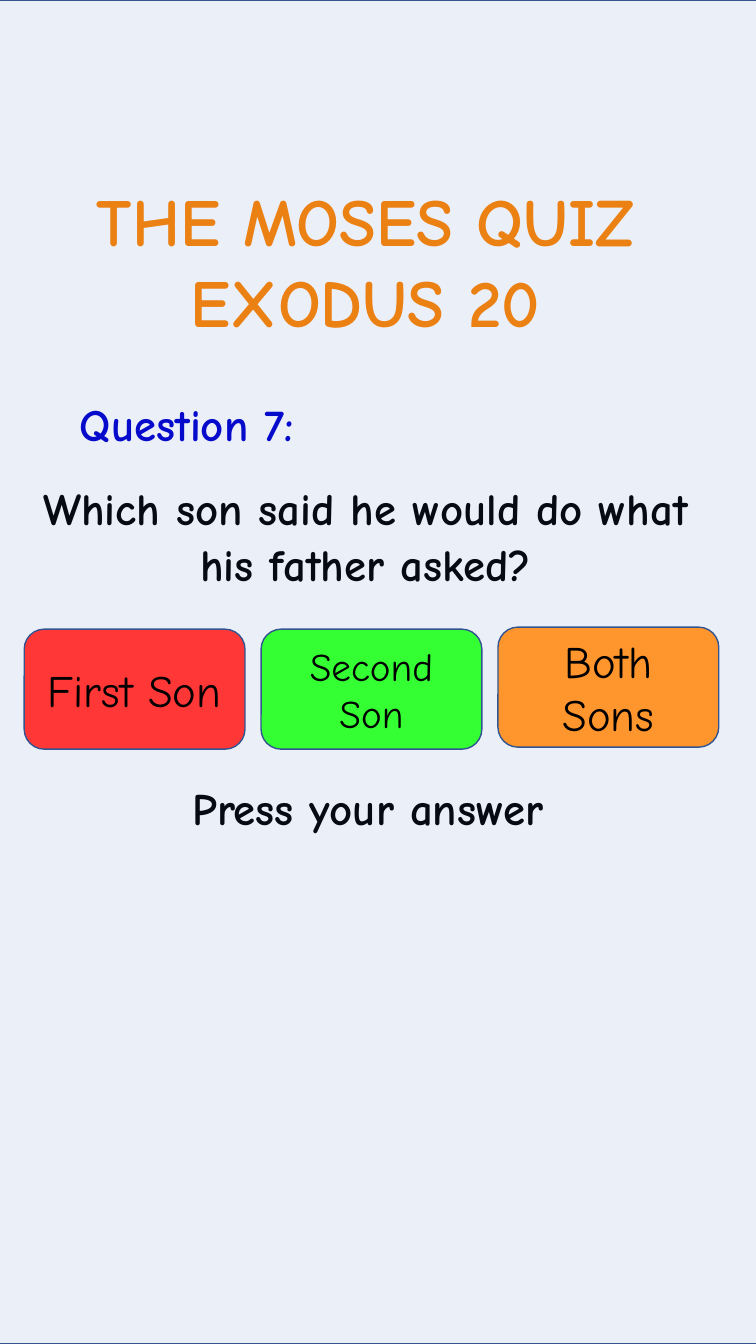
from dataclasses import dataclass, field
from typing import Any

from lxml.etree import SubElement
from pptx import Presentation
from pptx.dml.color import RGBColor
from pptx.enum.shapes import MSO_SHAPE
from pptx.enum.text import MSO_ANCHOR, MSO_AUTO_SIZE, PP_ALIGN
from pptx.oxml.ns import qn
from pptx.util import Inches, Pt

CELL = Inches(0.1)  # the slide is a grid of 75 columns by 133.3 rows
COLS, ROWS = 75, 133.3
FONT = "Comic Neue"
HUES = {
    "title": "FF8200", "label": "0000CC", "ink": "000000",
    "tint": "4472C4", "edge": "325491",
    "red": "FF3737", "green": "33FF33", "orange": "FF962D",
}
GROW = {"word_wrap": False, "auto_size": MSO_AUTO_SIZE.SHAPE_TO_FIT_TEXT}
WRAP = {"word_wrap": True}
MID = {"word_wrap": True, "vertical_anchor": MSO_ANCHOR.MIDDLE}


@dataclass
class Box:
    col: float
    row: float
    wide: float
    high: float

    def spans(self) -> list[int]:
        return [round(n * CELL) for n in (self.col, self.row, self.wide, self.high)]


@dataclass
class Label:
    box: Box
    lines: list[str]
    size: int
    hue: str = "ink"
    frame: dict[str, Any] = field(default_factory=lambda: WRAP)
    para: dict[str, Any] = field(default_factory=dict)


@dataclass
class Button:
    text: str
    hue: str
    size: int
    row: float


LABELS = [
    Label(Box(3, 17.3, 68.9, 17.2), ["THE MOSES QUIZ ", "EXODUS 20 "], 48, "title", GROW),
    Label(Box(4.7, 38.9, 27.7, 6.4), ["Question 7:"], 32, "label", GROW),
    Label(Box(0, 47, 72.6, 16.3),
          ["Which son said he would do what his father asked?"], 32,
          para={"line_spacing": Pt(40), "space_before": Pt(7.5)}),
    Label(Box(18.1, 77.5, 42.2, 7.2), ["Press your answer"], 32,
          para={"alignment": PP_ALIGN.LEFT, "line_spacing": 0.9,
                "space_before": Pt(7.5)}),
]
BUTTONS = [
    Button("First Son", "red", 32, 62.4),
    Button("Second Son", "green", 28, 62.4),
    Button("Both Sons", "orange", 32, 62.2),
]
LEFT, STEP, WIDE, HIGH = 2.4, 23.5, 21.9, 11.9


def apply(item: Any, values: dict[str, Any]) -> None:
    for name, value in values.items():
        setattr(item, name, value)


def color(name: str) -> RGBColor:
    return RGBColor.from_string(HUES[name])


def write(frame: Any, lines: list[str], size: int, hue: str, bold: bool,
          look: dict[str, Any], para: dict[str, Any]) -> None:
    apply(frame, look)
    for i, line in enumerate(lines):
        part = frame.add_paragraph() if i else frame.paragraphs[0]
        apply(part, {"alignment": PP_ALIGN.CENTER} | para)
        run = part.add_run()
        run.text = line
        apply(run.font, {"name": FONT, "size": Pt(size), "bold": bold})
        run.font.color.rgb = color(hue)


def add_label(shapes: Any, label: Label) -> None:
    frame = shapes.add_textbox(*label.box.spans()).text_frame
    write(frame, label.lines, label.size, label.hue, True, label.frame, label.para)


def add_panel(shapes: Any, kind: MSO_SHAPE, box: Box, hue: str) -> Any:
    panel = shapes.add_shape(kind, *box.spans())
    panel.shadow.inherit = False
    panel.fill.solid()
    panel.fill.fore_color.rgb = color(hue)
    panel.line.color.rgb = color("edge")
    panel.line.width = Pt(1)
    return panel


def add_tint(shapes: Any) -> None:
    """Lay a sheet of 10% opacity over the text, wider than the slide."""
    sheet = add_panel(shapes, MSO_SHAPE.RECTANGLE, Box(-3.2, 0, 82.2, ROWS), "tint")
    fill = sheet.fill._xPr.find(qn("a:solidFill"))
    SubElement(fill[0], qn("a:alpha"), val="10000")


def add_button(shapes: Any, spot: int, button: Button) -> None:
    box = Box(LEFT + spot * STEP, button.row, WIDE, HIGH)
    panel = add_panel(shapes, MSO_SHAPE.ROUNDED_RECTANGLE, box, button.hue)
    write(panel.text_frame, [button.text], button.size, "ink", False, MID, {})


def main() -> None:
    deck = Presentation()
    apply(deck, {"slide_width": round(COLS * CELL), "slide_height": round(ROWS * CELL)})
    shapes = deck.slides.add_slide(deck.slide_layouts[6]).shapes
    for label in LABELS:
        add_label(shapes, label)
    add_tint(shapes)
    for spot, button in enumerate(BUTTONS):
        add_button(shapes, spot, button)
    deck.save("out.pptx")


if __name__ == "__main__":
    main()
